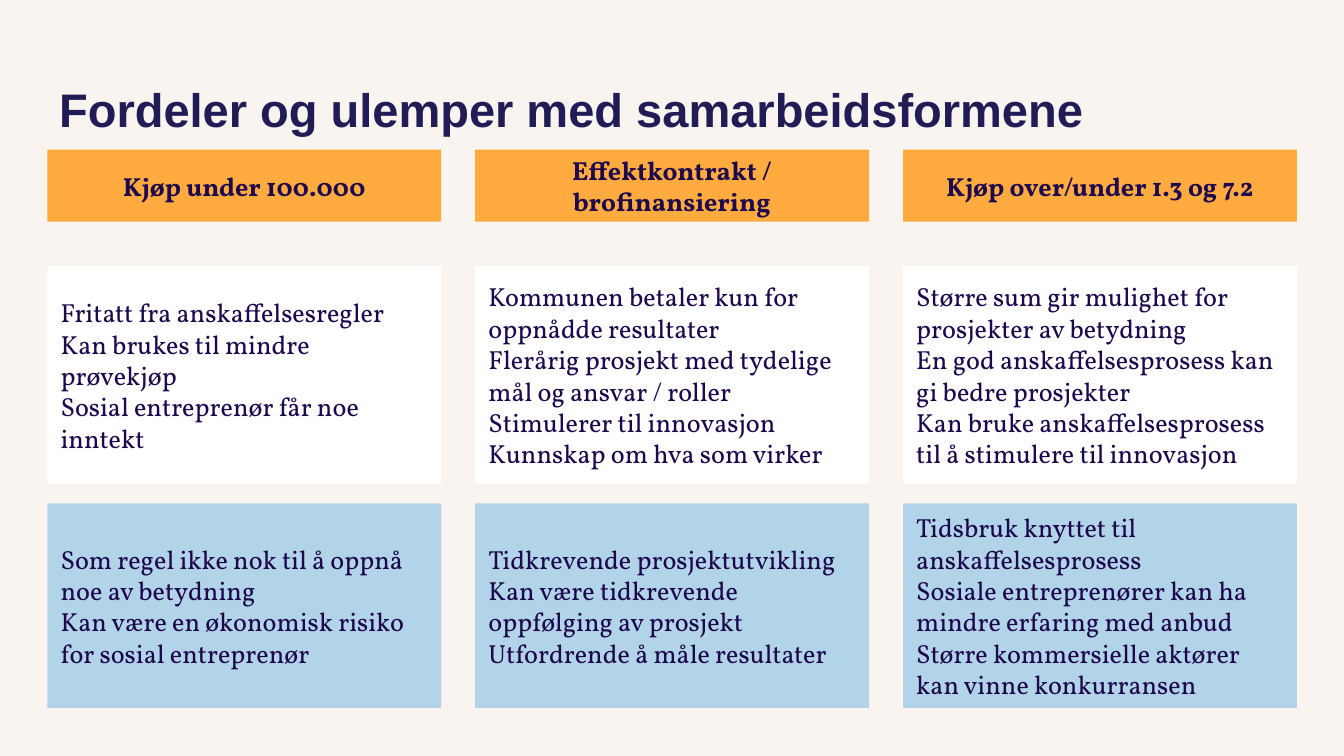
from dataclasses import dataclass

from pptx import Presentation
from pptx.dml.color import RGBColor
from pptx.enum.shapes import MSO_SHAPE
from pptx.enum.text import MSO_ANCHOR, MSO_AUTO_SIZE, PP_ALIGN
from pptx.util import Pt

RECTANGLE = MSO_SHAPE.RECTANGLE
MIDDLE, BOTTOM = MSO_ANCHOR.MIDDLE, MSO_ANCHOR.BOTTOM
LEFT, CENTER = PP_ALIGN.LEFT, PP_ALIGN.CENTER
NO_AUTOFIT = MSO_AUTO_SIZE.NONE
TITLE_ONLY = 5


@dataclass(frozen=True)
class Theme:
    background: str = "F9F4F0"
    title: str = "211C56"
    text: str = "1D074D"
    heading: str = "FFAB40"
    benefits: str = "FFFFFF"
    drawbacks: str = "B2D4E8"
    title_font: str = "Arial"
    body_font: str = "Vollkorn"
    title_size: float = 25.2
    body_size: float = 14
    inset: float = 7.2


THEME = Theme()

FIRST_LEFT, COLUMN_PITCH, COLUMN_WIDTH = 25.4, 229.2, 211
# Top, height, fill, alignment and weight of each row
ROWS = [
    (80.2, 38.6, THEME.heading, CENTER, True),
    (142.5, 116.8, THEME.benefits, LEFT, False),
    (269.7, 109.6, THEME.drawbacks, LEFT, False),
]

# Heading, benefits and drawbacks of each form of cooperation
COOPERATION_FORMS = [
    (
        ["Kjøp under 100.000"],
        ["Fritatt fra anskaffelsesregler",
         "Kan brukes til mindre prøvekjøp",
         "Sosial entreprenør får noe inntekt"],
        ["Som regel ikke nok til å oppnå noe av betydning",
         "Kan være en økonomisk risiko for sosial entreprenør"],
    ),
    (
        ["Effektkontrakt / brofinansiering"],
        ["Kommunen betaler kun for oppnådde resultater",
         "Flerårig prosjekt med tydelige mål og ansvar / roller",
         "Stimulerer til innovasjon",
         "Kunnskap om hva som virker"],
        ["Tidkrevende prosjektutvikling",
         "Kan være tidkrevende oppfølging av prosjekt",
         "Utfordrende å måle resultater"],
    ),
    (
        ["Kjøp over/under 1.3 og 7.2"],
        ["Større sum gir mulighet for prosjekter av betydning",
         "En god anskaffelsesprosess kan gi bedre prosjekter",
         "Kan bruke anskaffelsesprosess til å stimulere til innovasjon"],
        ["Tidsbruk knyttet til anskaffelsesprosess",
         "Sosiale entreprenører kan ha mindre erfaring med anbud",
         "Større kommersielle aktører kan vinne konkurransen"],
    ),
]


def write_text(frame, lines, font_name, size, color, bold, align, anchor):
    frame.text = "\n".join(lines)
    frame.word_wrap = True
    frame.auto_size = NO_AUTOFIT
    frame.vertical_anchor = anchor
    frame.margin_left = frame.margin_right = Pt(THEME.inset)
    frame.margin_top = frame.margin_bottom = Pt(THEME.inset)
    for paragraph in frame.paragraphs:
        paragraph.alignment = align
        for run in paragraph.runs:
            run.font.name = font_name
            run.font.size = Pt(size)
            run.font.bold = bold
            run.font.color.rgb = RGBColor.from_string(color)


def set_title(slide, wording):
    title = slide.shapes.title
    title.left, title.top = Pt(24.5), Pt(35.3)
    title.width, title.height = Pt(671), Pt(45.4)
    write_text(title.text_frame, [wording], THEME.title_font,
               THEME.title_size, THEME.title, True, LEFT, BOTTOM)


def add_card(slide, left, row, lines):
    top, height, fill, align, bold = row
    card = slide.shapes.add_shape(
        RECTANGLE, Pt(left), Pt(top), Pt(COLUMN_WIDTH), Pt(height))
    card.shadow.inherit = False
    card.fill.solid()
    card.fill.fore_color.rgb = RGBColor.from_string(fill)
    card.line.fill.background()
    write_text(card.text_frame, lines, THEME.body_font,
               THEME.body_size, THEME.text, bold, align, MIDDLE)


def main():
    presentation = Presentation()
    presentation.slide_width, presentation.slide_height = Pt(720), Pt(405)
    slide = presentation.slides.add_slide(
        presentation.slide_layouts[TITLE_ONLY])
    slide.background.fill.solid()
    slide.background.fill.fore_color.rgb = RGBColor.from_string(
        THEME.background)

    set_title(slide, "Fordeler og ulemper med samarbeidsformene")
    for column, form in enumerate(COOPERATION_FORMS):
        left = FIRST_LEFT + column * COLUMN_PITCH
        for row, lines in zip(ROWS, form):
            add_card(slide, left, row, lines)

    presentation.save("out.pptx")


if __name__ == "__main__":
    main()
